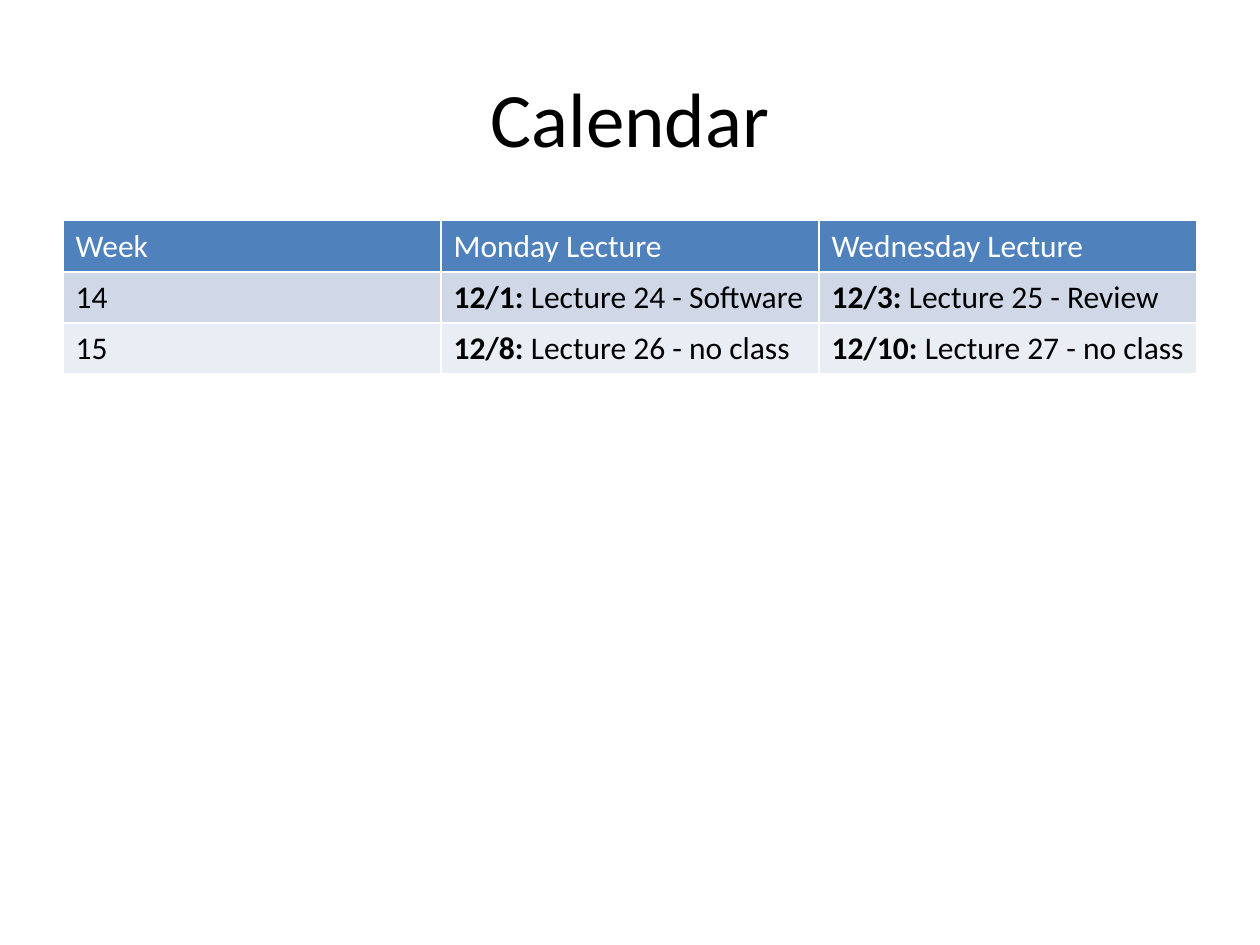
import pptx
import pptx.util
import pptx.dml.color
import pptx.enum.text

Cm, Pt = pptx.util.Cm, pptx.util.Pt
hues = {"head": "4F81BD", "odd": "D0D8E8", "even": "E9EDF4",
        "white": "FFFFFF", "black": "000000"}


def color(name):
    return pptx.dml.color.RGBColor.from_string(hues[name])


def style(para, size, hue):
    para.font.name = "Calibri"
    para.font.size = Pt(size)
    para.font.color.rgb = color(hue)


deck = pptx.Presentation()
deck.slide_width, deck.slide_height = Cm(25.4), Cm(19.05)
slide = deck.slides.add_slide(deck.slide_layouts[5])

title = slide.shapes.title
title.left, title.top = Cm(1.27), Cm(0.76)
title.width, title.height = Cm(22.86), Cm(3.18)
title.text_frame.text = "Calendar"
title.text_frame.vertical_anchor = pptx.enum.text.MSO_ANCHOR.MIDDLE
para = title.text_frame.paragraphs[0]
para.alignment = pptx.enum.text.PP_ALIGN.CENTER
style(para, 44, "black")

# Each cell is a list of runs; the date of a lecture comes first, in bold.
rows = [
    [["Week"], ["Monday Lecture"], ["Wednesday Lecture"]],
    [["14"], ["12/1:", " Lecture 24 - Software"],
     ["12/3:", " Lecture 25 - Review"]],
    [["15"], ["12/8:", " Lecture 26 - no class"],
     ["12/10:", " Lecture 27 - no class"]],
]
fills = ["head", "odd", "even"]
table = slide.shapes.add_table(
    len(rows), 3, Cm(1.27), Cm(4.45), Cm(22.86), Cm(3.09)).table

for r, row in enumerate(rows):
    for c, parts in enumerate(row):
        cell = table.cell(r, c)
        cell.fill.solid()
        cell.fill.fore_color.rgb = color(fills[r])
        para = cell.text_frame.paragraphs[0]
        style(para, 18, "black" if r else "white")
        for i, part in enumerate(parts):
            run = para.add_run()
            run.text = part
            run.font.bold = len(parts) > 1 and i == 0

deck.save("out.pptx")
